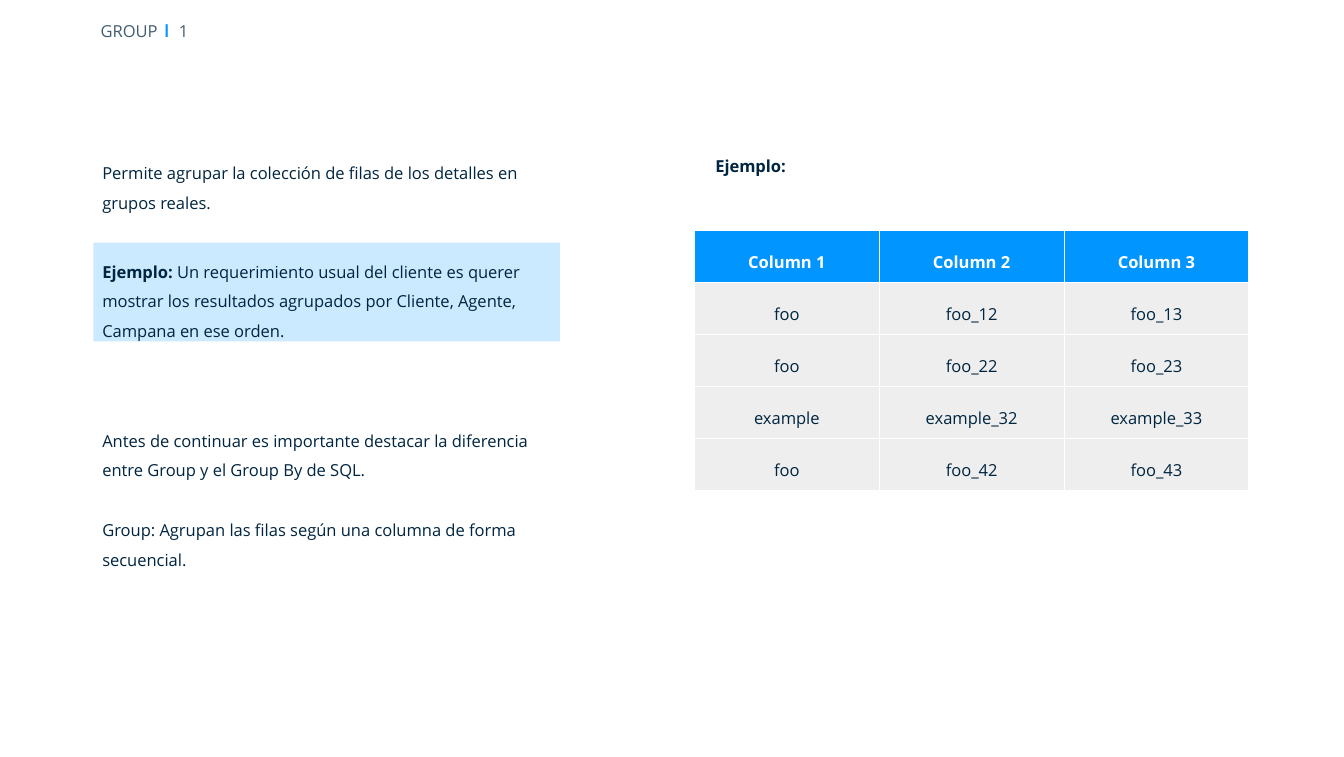
from lxml import etree
from pptx import Presentation
from pptx.dml.color import RGBColor
from pptx.enum.shapes import MSO_SHAPE
from pptx.enum.text import MSO_ANCHOR, MSO_AUTO_SIZE, PP_ALIGN
from pptx.oxml.ns import qn
from pptx.util import Inches, Pt

RECTANGLE = MSO_SHAPE.RECTANGLE
MIDDLE, TOP = MSO_ANCHOR.MIDDLE, MSO_ANCHOR.TOP
FIXED_SIZE = MSO_AUTO_SIZE.NONE
LEFT, CENTER = PP_ALIGN.LEFT, PP_ALIGN.CENTER

BODY_FONT, ACCENT_FONT = "Open Sans", "Manrope"
INK, MUTED, ACCENT = "002540", "435E72", "0095FF"
WHITE, PALE_BLUE, PALE_GRAY = "FFFFFF", "CCEAFF", "EEEEEE"
BODY_SIZE = 13
LINE_SPACING = 1.5
LINE_PITCH = 23.4

EXPLANATION = [
    ("Permite agrupar la colección de filas de los detalles en grupos reales.", 0),
    ("Antes de continuar es importante destacar la diferencia entre Group y el "
     "Group By de SQL.", 7),
    ("Group: Agrupan las filas según una columna de forma secuencial.", 1),
]
USE_CASE = (" Un requerimiento usual del cliente es querer mostrar los resultados "
            "agrupados por Cliente, Agente, Campana en ese orden.")
ROWS = [
    ("Column 1", "Column 2", "Column 3"),
    ("foo", "foo_12", "foo_13"),
    ("foo", "foo_22", "foo_23"),
    ("example", "example_32", "example_33"),
    ("foo", "foo_42", "foo_43"),
]


def color(value):
    return RGBColor.from_string(value)


def set_fill(item, value):
    item.fill.solid()
    item.fill.fore_color.rgb = color(value)


def set_font(font, value=INK, bold=False, name=BODY_FONT, size=BODY_SIZE):
    font.name, font.size, font.bold = name, Pt(size), bold
    font.color.rgb = color(value)


def set_margins(item, margin):
    item.margin_left = item.margin_right = Inches(margin)
    item.margin_top = item.margin_bottom = Inches(margin)


def prepare_frame(shape, margin=0.1, anchor=TOP):
    frame = shape.text_frame
    frame.word_wrap = True
    frame.auto_size = FIXED_SIZE
    frame.vertical_anchor = anchor
    set_margins(frame, margin)
    return frame


def format_paragraph(para, value=INK, bold=False, alignment=LEFT):
    para.alignment = alignment
    para.line_spacing = LINE_SPACING
    set_font(para.font, value, bold)


def add_text_box(page, left, top, width, height):
    box = page.shapes.add_textbox(*map(Inches, (left, top, width, height)))
    return prepare_frame(box)


def add_title(page, left, top, width, height):
    title = page.shapes.title
    title.left, title.top = Inches(left), Inches(top)
    title.width, title.height = Inches(width), Inches(height)
    set_fill(title, WHITE)
    para = prepare_frame(title, 0.15, MIDDLE).paragraphs[0]
    para.alignment = LEFT
    group, separator, number = [para.add_run() for _ in range(3)]
    group.text, separator.text, number.text = "GROUP", " | ", "1"
    set_font(group.font, MUTED)
    set_font(separator.font, ACCENT, True, ACCENT_FONT, 14)
    separator.font._element.set("spc", "230")
    set_font(number.font, MUTED)


def add_explanation(page, left, top, width, height):
    frame = add_text_box(page, left, top, width, height)
    for index, (text, lines_before) in enumerate(EXPLANATION):
        para = frame.add_paragraph() if index else frame.paragraphs[0]
        para.text = text
        format_paragraph(para)
        if lines_before:
            para.space_before = Pt(lines_before * LINE_PITCH)


def add_use_case(page, left, top, width, height):
    box = page.shapes.add_shape(RECTANGLE, *map(Inches, (left, top, width, height)))
    box.shadow.inherit = False
    set_fill(box, PALE_BLUE)
    box.line.fill.background()
    para = prepare_frame(box).paragraphs[0]
    format_paragraph(para)
    label, sentence = para.add_run(), para.add_run()
    label.text, sentence.text = "Ejemplo:", USE_CASE
    label.font.bold = True


def add_table_label(page, left, top, width, height):
    para = add_text_box(page, left, top, width, height).paragraphs[0]
    para.text = "Ejemplo:"
    format_paragraph(para, bold=True)


def add_cell_borders(cell):
    properties = cell._tc.get_or_add_tcPr()
    for index, side in enumerate(("lnL", "lnR", "lnT", "lnB")):
        line = etree.Element(qn(f"a:{side}"), w=str(Pt(0.75)))
        fill = etree.SubElement(line, qn("a:solidFill"))
        etree.SubElement(fill, qn("a:srgbClr"), val=WHITE)
        properties.insert(index, line)


def add_example_table(page, left, top, width, row_height):
    frame = page.shapes.add_table(
        len(ROWS), len(ROWS[0]), Inches(left), Inches(top),
        Inches(width), Inches(row_height * len(ROWS)))
    table = frame.table
    for row_index, values in enumerate(ROWS):
        header = row_index == 0
        for column_index, value in enumerate(values):
            cell = table.cell(row_index, column_index)
            set_fill(cell, ACCENT if header else PALE_GRAY)
            set_margins(cell, 0.1)
            para = cell.text_frame.paragraphs[0]
            para.text = value
            format_paragraph(para, WHITE if header else INK, header, CENTER)
            add_cell_borders(cell)


def build_group_slide(deck):
    page = deck.slides.add_slide(deck.slide_layouts[5])
    add_title(page, 0.95, 0.1, 6.24, 0.47)
    add_explanation(page, 1.02, 1.57, 5.1, 4.69)
    add_use_case(page, 1.02, 2.65, 5.1, 1.08)
    add_table_label(page, 7.72, 1.5, 1.1, 0.42)
    add_example_table(page, 7.59, 2.52, 6.06, 0.42)


def main():
    deck = Presentation()
    deck.slide_width, deck.slide_height = Inches(14.69), Inches(8.27)
    build_group_slide(deck)
    deck.save("out.pptx")


if __name__ == "__main__":
    main()
